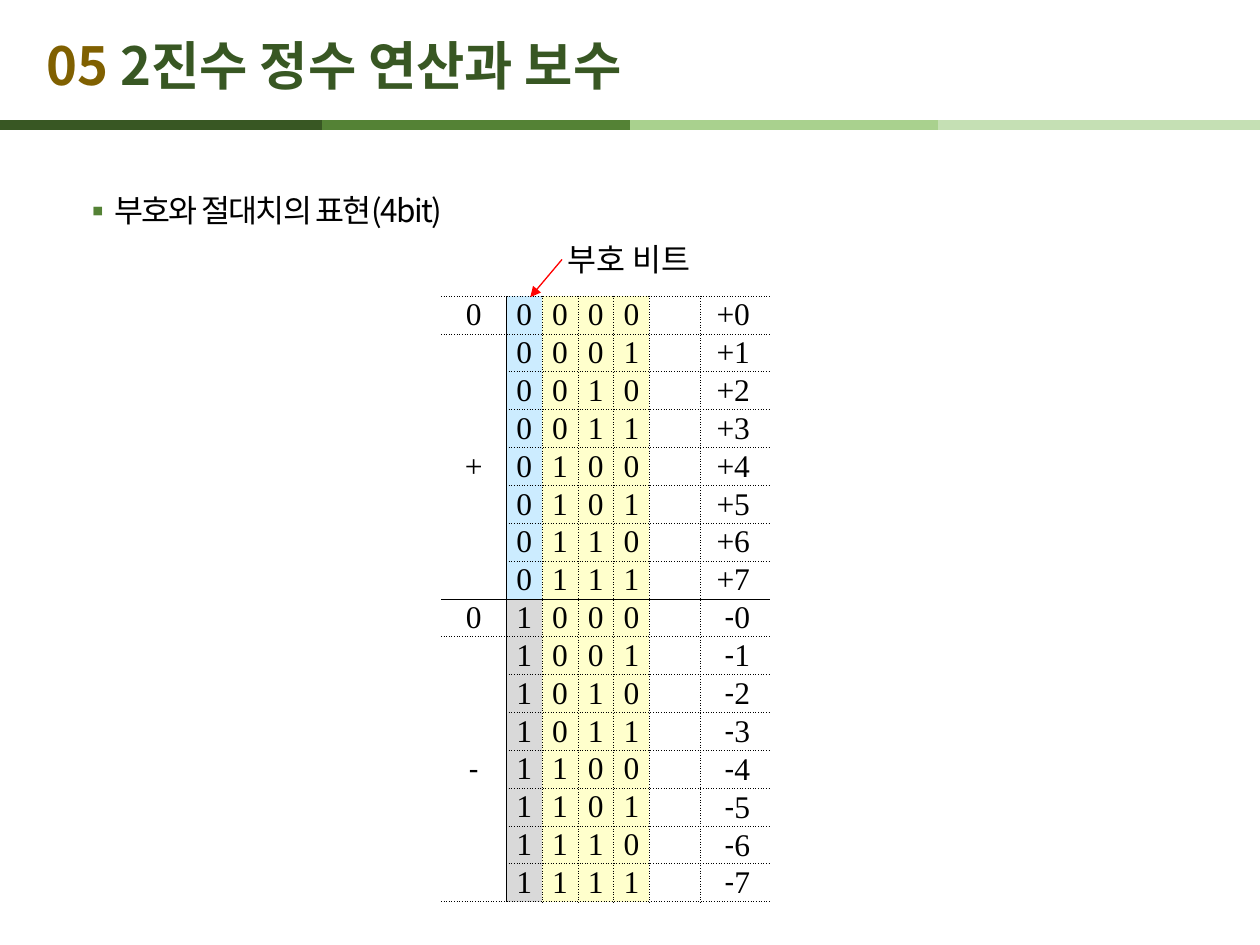
from lxml import etree
from pptx import Presentation
from pptx import util as u
from pptx.dml.color import RGBColor
from pptx.enum import shapes, text
from pptx.oxml.ns import qn

HUES = {
    "gold": "806000", "pine": "385723", "leaf": "548235",
    "lime": "A9D18E", "mint": "C5E0B4", "black": "000000",
    "red": "FF0000", "sky": "CCECFF", "cream": "FFFFCC", "gray": "D9D9D9",
}
SANS, SERIF = "Noto Sans CJK KR", "Times New Roman"
BITS = 4
ROWS = 2 ** BITS
HALF = ROWS // 2


def style(run, font, size, hue, bold=False):
    run.font.name = font
    run.font.size = u.Pt(size)
    run.font.bold = bold
    run.font.color.rgb = RGBColor.from_string(HUES[hue])
    props = run.font._element
    etree.SubElement(props, qn("a:ea")).set("typeface", font)


def edge(cell, side, dash):
    line = etree.SubElement(cell._tc.get_or_add_tcPr(), qn("a:ln" + side), w="6350")
    if dash is None:
        etree.SubElement(line, qn("a:noFill"))
        return
    fill = etree.SubElement(line, qn("a:solidFill"))
    etree.SubElement(fill, qn("a:srgbClr"), val=HUES["black"])
    etree.SubElement(line, qn("a:prstDash"), val=dash)


deck = Presentation()
deck.slide_width, deck.slide_height = u.Cm(25.4), u.Cm(19.05)
slide = deck.slides.add_slide(deck.slide_layouts[6])

for left, hue in ((0, "pine"), (6.5, "leaf"), (12.7, "lime"), (18.9, "mint")):
    band = slide.shapes.add_connector(
        shapes.MSO_CONNECTOR.STRAIGHT, u.Cm(left), u.Cm(2.52), u.Cm(left + 6.5), u.Cm(2.52))
    band.line.width = u.Pt(6)
    band.line.color.rgb = RGBColor.from_string(HUES[hue])
    etree.SubElement(band._element.spPr, qn("a:effectLst"))

title = slide.shapes.add_textbox(u.Cm(0.69), u.Cm(0.53), u.Cm(21), u.Cm(1.52)).text_frame
title.word_wrap = True
title.vertical_anchor = text.MSO_ANCHOR.MIDDLE
for words, hue in (("05 ", "gold"), ("2진수 정수 연산과 보수", "pine")):
    run = title.paragraphs[0].add_run()
    run.text = words
    style(run, SANS, 30, hue, True)

body = slide.shapes.add_textbox(u.Cm(0.69), u.Cm(3.73), u.Cm(24), u.Cm(1.2)).text_frame
body.word_wrap = True
body.text = "부호와 절대치의 표현(4bit)"
point = body.paragraphs[0]
point.space_after = u.Pt(4)
props = point._p.get_or_add_pPr()
props.set("marL", str(u.Cm(1.24)))
props.set("indent", str(u.Cm(-0.51)))
tint = etree.SubElement(props, qn("a:buClr"))
etree.SubElement(tint, qn("a:srgbClr"), val=HUES["leaf"])
etree.SubElement(props, qn("a:buFont"), typeface=SANS)
etree.SubElement(props, qn("a:buChar"), char="▪")
style(point.runs[0], SANS, 18, "black")
point.runs[0].font._element.set("spc", "-100")

label = slide.shapes.add_textbox(u.Cm(11.2), u.Cm(4.72), u.Cm(3.28), u.Cm(1.04)).text_frame
label.word_wrap = False
label.auto_size = text.MSO_AUTO_SIZE.SHAPE_TO_FIT_TEXT
label.text = "부호 비트"
style(label.paragraphs[0].runs[0], SANS, 18, "black")

wides = [1.32] + [0.72] * BITS + [1.03, 1.4]
last = len(wides) - 1
grid = slide.shapes.add_table(
    ROWS, len(wides), u.Cm(8.89), u.Cm(5.97), u.Cm(sum(wides)), u.Cm(12.22)).table
grid.first_row = grid.horz_banding = False
for col, wide in zip(grid.columns, wides):
    col.width = u.Cm(wide)

for r in range(ROWS):
    sign = "+" if r < HALF else "-"
    size = r % HALF
    head = {0: "0", 1: sign}.get(size, "")
    for c, words in enumerate([head, *f"{r:0{BITS}b}", "", f"{sign}{size}"]):
        cell = grid.cell(r, c)
        edge(cell, "L", None if c == 0 else "solid" if c == 1 else "sysDot")
        edge(cell, "R", None if c == last else "solid" if c == 0 else "sysDot")
        edge(cell, "T", "solid" if r == HALF else "sysDot")
        edge(cell, "B", "solid" if r == HALF - 1 else "sysDot")
        if 1 <= c <= BITS:
            hue = "cream" if c > 1 else "sky" if r < HALF else "gray"
            cell.fill.solid()
            cell.fill.fore_color.rgb = RGBColor.from_string(HUES[hue])
        else:
            cell.fill.background()
        cell.margin_left = u.Cm(0.1)
        cell.margin_right = u.Cm(0.4 if c == last else 0.1)
        cell.margin_top = cell.margin_bottom = 0
        cell.vertical_anchor = text.MSO_ANCHOR.MIDDLE
        para = cell.text_frame.paragraphs[0]
        para.alignment = text.PP_ALIGN.RIGHT if c == last else text.PP_ALIGN.CENTER
        for part in (["-", words[1:]] if words.startswith("-") else [words]):
            if part:
                run = para.add_run()
                run.text = part
                style(run, "Calibri" if part == "-" else SERIF, 18, "black")
        if not words:
            etree.SubElement(para._p, qn("a:endParaRPr"), sz="1200")

for top in (1, HALF + 1):
    grid.cell(top, 0).merge(grid.cell(top + HALF - 2, 0))

arrow = slide.shapes.add_connector(
    shapes.MSO_CONNECTOR.STRAIGHT, u.Cm(11.33), u.Cm(5.23), u.Cm(10.69), u.Cm(5.99))
arrow.line.width = u.Pt(0.75)
arrow.line.color.rgb = RGBColor.from_string(HUES["red"])
etree.SubElement(arrow.line._get_or_add_ln(), qn("a:tailEnd"), type="triangle")
etree.SubElement(arrow._element.spPr, qn("a:effectLst"))

deck.save("out.pptx")
